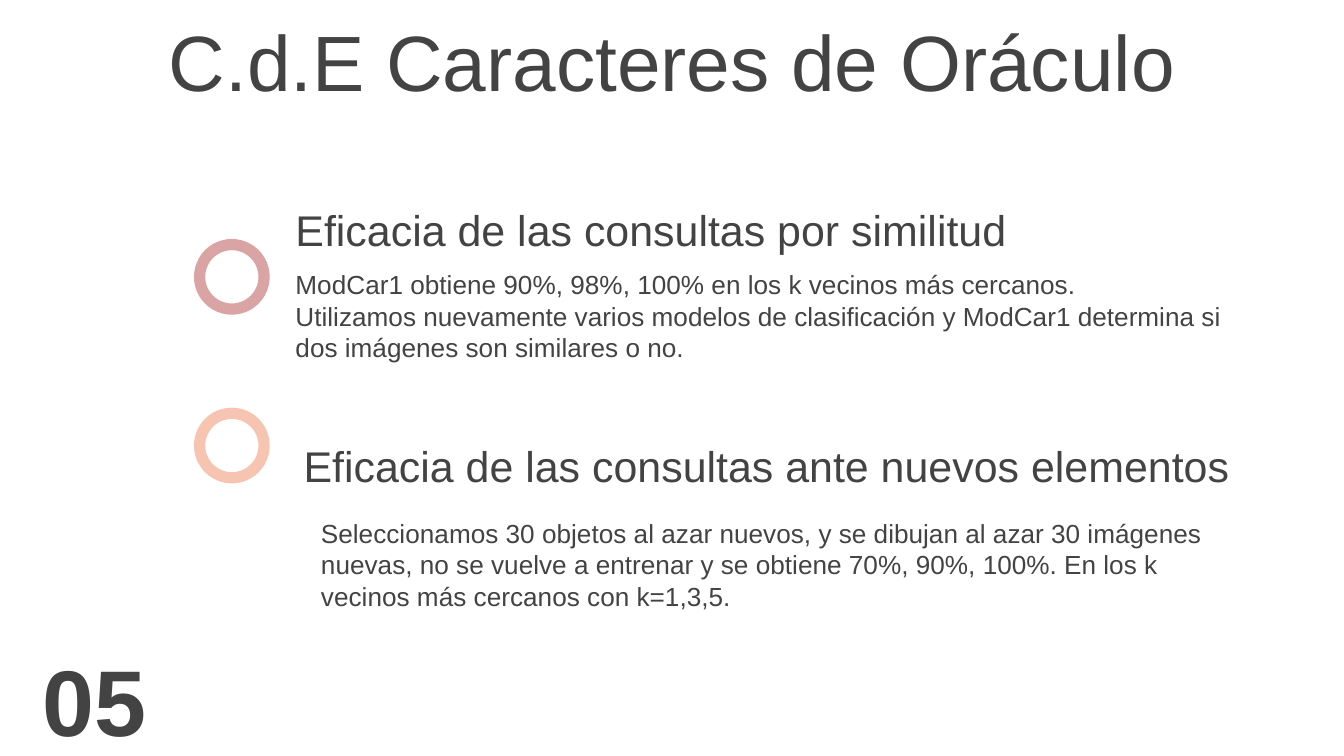
from pptx import Presentation
from pptx.dml.color import RGBColor
from pptx.enum.shapes import MSO_SHAPE
from pptx.enum.text import MSO_ANCHOR, PP_ALIGN
from pptx.util import Pt

PX = 4572  # EMU per px, 200 px to the inch
FONT = "Arial"
INK = RGBColor(0x43, 0x43, 0x43)
ROSE = RGBColor(0xD9, 0xA4, 0xA3)
PEACH = RGBColor(0xF7, 0xC4, 0xB1)
RING_LEFT, RING_SIZE = 297, 96
INSET = 20


def px(*lengths):
    return [length * PX for length in lengths]


def add_text(slide, box, lines, size, anchor=MSO_ANCHOR.TOP,
             align=PP_ALIGN.LEFT, bold=False):
    shape = slide.shapes.add_textbox(*px(*box))
    frame = shape.text_frame
    frame.word_wrap = True
    frame.vertical_anchor = anchor
    frame.margin_left = frame.margin_right = INSET * PX
    frame.margin_top = frame.margin_bottom = INSET * PX
    frame.text = "\n".join(lines)
    for paragraph in frame.paragraphs:
        paragraph.alignment = align
        for run in paragraph.runs:
            run.font.name = FONT
            run.font.size = Pt(size)
            run.font.bold = bold
            run.font.color.rgb = INK


def add_ring(slide, top, color):
    ring = slide.shapes.add_shape(
        MSO_SHAPE.OVAL, *px(RING_LEFT, top, RING_SIZE, RING_SIZE))
    ring.shadow.inherit = False
    ring.fill.background()
    ring.line.color.rgb = color
    ring.line.width = Pt(6)


def add_topic(slide, ring_top, color, heading_box, heading, body_box, body):
    add_ring(slide, ring_top, color)
    add_text(slide, heading_box, [heading], 23, MSO_ANCHOR.BOTTOM)
    add_text(slide, body_box, body, 14)


def main():
    presentation = Presentation()
    presentation.slide_width, presentation.slide_height = px(2000, 1125)
    slide = presentation.slides.add_slide(presentation.slide_layouts[6])

    # Title
    add_text(slide, (157, 0, 1686, 168), ["C.d.E Caracteres de Oráculo"], 42,
             align=PP_ALIGN.CENTER)

    # Topics
    add_topic(slide, 364, ROSE,
              (420, 293, 1448, 106), "Eficacia de las consultas por similitud",
              (420, 380, 1464, 124),
              ["ModCar1 obtiene 90%, 98%, 100% en los k vecinos más cercanos.",
               "Utilizamos nuevamente varios modelos de clasificación y ModCar1 "
               "determina si dos imágenes son similares o no."])
    add_topic(slide, 615, PEACH,
              (432, 645, 1422, 106),
              "Eficacia de las consultas ante nuevos elementos",
              (458, 750, 1360, 182),
              ["Seleccionamos 30 objetos al azar nuevos, y se dibujan al azar "
               "30 imágenes nuevas, no se vuelve a entrenar y se obtiene 70%, "
               "90%, 100%. En los k vecinos más cercanos con k=1,3,5."])

    # Section number
    add_text(slide, (43, 964, 244, 152), ["05"], 50, MSO_ANCHOR.MIDDLE, bold=True)

    presentation.save("out.pptx")


if __name__ == "__main__":
    main()
